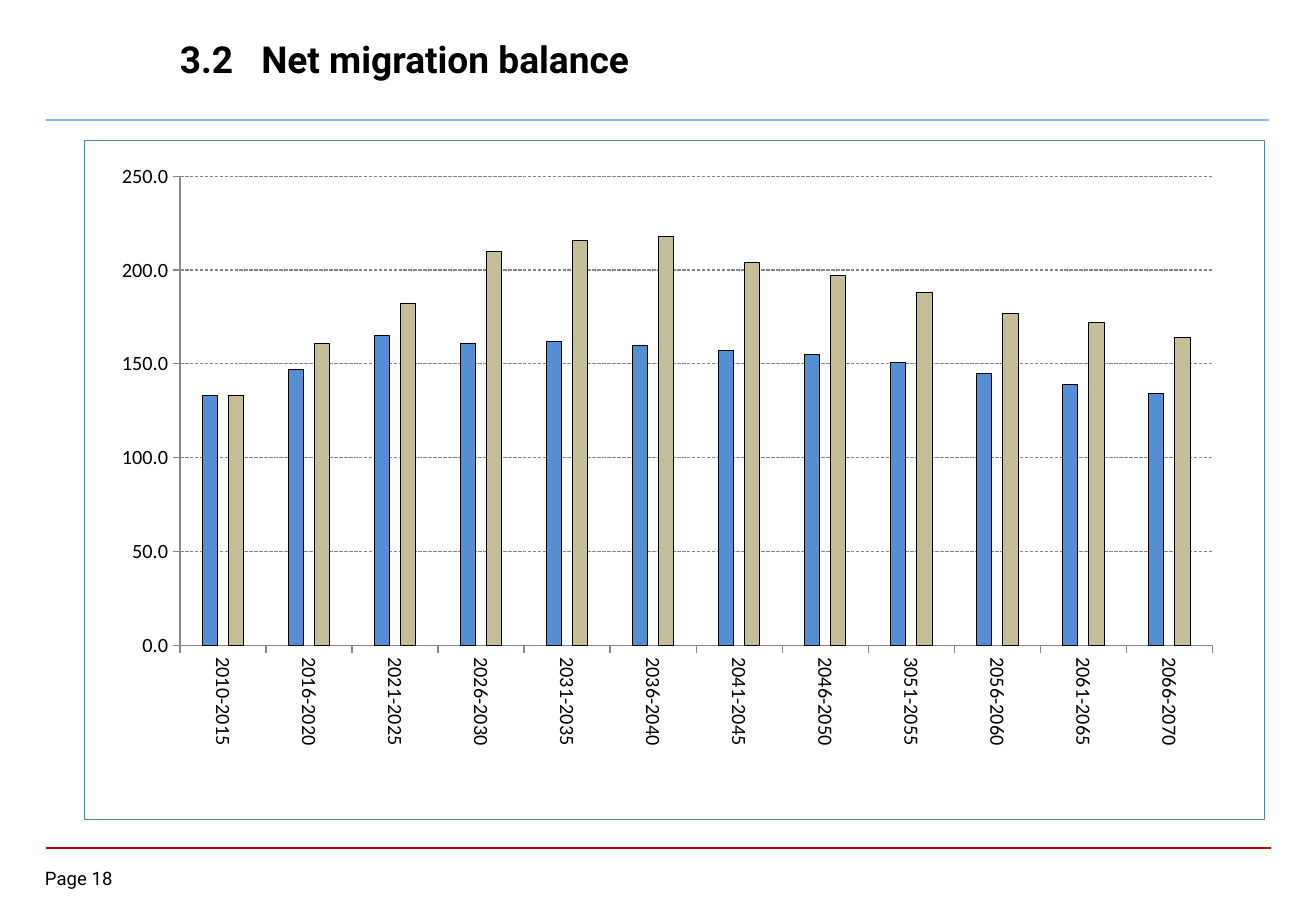
"""Build the net migration balance slide with its clustered column chart."""
from dataclasses import dataclass

from lxml import etree
from pptx import Presentation
from pptx import util as u
from pptx.chart import data as chart_data
from pptx.dml import color
from pptx.enum import chart as charts
from pptx.enum import dml, shapes, text
from pptx.oxml import parse_xml
from pptx.oxml import ns

BLACK = "000000"
AXIS_GRAY = "868686"
PERIODS = ["2010-2015", "2016-2020", "2021-2025", "2026-2030",
           "2031-2035", "2036-2040", "2041-2045", "2046-2050",
           "3051-2055", "2056-2060", "2061-2065", "2066-2070"]


@dataclass
class Rule:
    y: float
    right: float
    hex_color: str
    points: float


@dataclass
class Label:
    words: str
    left: float
    top: float
    width: float
    height: float
    size: int
    bold: bool = False
    tab: float = 0


@dataclass
class Columns:
    hex_color: str
    values: list[int]


RULES = [Rule(6.98, 10.46, "C00000", 1), Rule(0.99, 10.44, "8EB4E3", 1.5)]
LABELS = [
    Label("Page 18", 0.37, 7.12, 0.73, 0.22, 11),
    Label("3.2\tNet migration balance", 1.48, 0.13, 5.75, 0.71, 22, True, 0.67),
]
COLUMNS = [
    Columns("558ED5", [133, 147, 165, 161, 162, 160, 157, 155, 151, 145, 139, 134]),
    Columns("C4BD97", [133, 161, 182, 210, 216, 218, 204, 197, 188, 177, 172, 164]),
]


def rgb(hex_color: str) -> color.RGBColor:
    return color.RGBColor.from_string(hex_color)


def style_line(line, hex_color: str, points: float) -> None:
    line.color.rgb = rgb(hex_color)
    line.width = u.Pt(points)


def style_font(font, name: str, size: int, bold: bool = False) -> None:
    font.name = name
    font.size = u.Pt(size)
    font.bold = bold
    font.color.rgb = rgb(BLACK)


def draw_rule(slide, rule: Rule) -> None:
    connector = slide.shapes.add_connector(
        shapes.MSO_CONNECTOR.STRAIGHT, u.Inches(0.38), u.Inches(rule.y),
        u.Inches(rule.right), u.Inches(rule.y))
    style_line(connector.line, rule.hex_color, rule.points)
    etree.SubElement(connector._element.spPr, ns.qn("a:effectLst"))


def draw_label(slide, label: Label) -> None:
    box = slide.shapes.add_textbox(
        u.Inches(label.left), u.Inches(label.top),
        u.Inches(label.width), u.Inches(label.height))
    frame = box.text_frame
    frame.margin_left = frame.margin_right = 0
    frame.margin_top = frame.margin_bottom = 0
    frame.word_wrap = True
    frame.vertical_anchor = text.MSO_ANCHOR.MIDDLE
    frame.text = label.words
    paragraph = frame.paragraphs[0]
    if label.tab:
        tabs = etree.SubElement(paragraph._p.get_or_add_pPr(), ns.qn("a:tabLst"))
        etree.SubElement(tabs, ns.qn("a:tab"), pos=str(u.Inches(label.tab)), algn="l")
    for run in paragraph.runs:
        style_font(run.font, "Roboto", label.size, label.bold)


def frame_chart(chart) -> None:
    chart_space = chart._chartSpace
    chart_space.chart.addnext(parse_xml(
        f'<c:spPr {ns.nsdecls("c", "a")}><a:noFill/><a:ln w="{u.Pt(0.75)}">'
        '<a:solidFill><a:srgbClr val="4F81BD"/></a:solidFill></a:ln></c:spPr>'))
    chart_space.find(ns.qn("c:date1904")).addnext(
        parse_xml(f'<c:roundedCorners {ns.nsdecls("c")} val="0"/>'))


def place_plot(chart) -> None:
    places = {"x": 0.081, "y": 0.053, "w": 0.875, "h": 0.691}
    modes = '<c:xMode val="edge"/><c:yMode val="edge"/>'
    sizes = "".join(f'<c:{key} val="{value}"/>' for key, value in places.items())
    plot_area = chart._chartSpace.chart.plotArea
    for layout in plot_area.findall(ns.qn("c:layout")):
        plot_area.remove(layout)
    plot_area.insert(0, parse_xml(
        f'<c:layout {ns.nsdecls("c")}><c:manualLayout>'
        f'<c:layoutTarget val="inner"/>{modes}{sizes}</c:manualLayout></c:layout>'))


def style_axes(chart) -> None:
    for axis in (chart.category_axis, chart.value_axis):
        axis.major_tick_mark = charts.XL_TICK_MARK.OUTSIDE
        axis.minor_tick_mark = charts.XL_TICK_MARK.NONE
        style_line(axis.format.line, AXIS_GRAY, 0.75)
        style_font(axis.tick_labels.font, "Calibri", 12)
    body = chart.category_axis._element.txPr.find(ns.qn("a:bodyPr"))
    body.set("rot", "5400000")
    body.set("vert", "horz")
    values = chart.value_axis
    values.minimum_scale, values.maximum_scale, values.major_unit = 0, 250, 50
    values.tick_labels.number_format = "0.0"
    values.tick_labels.number_format_is_linked = False
    values.has_major_gridlines = True
    grid = values.major_gridlines.format.line
    style_line(grid, AXIS_GRAY, 0.75)
    grid.dash_style = dml.MSO_LINE.SQUARE_DOT


def draw_chart(slide) -> None:
    data = chart_data.CategoryChartData()
    data.categories = PERIODS
    for columns in COLUMNS:
        data.add_series("", columns.values)
    chart = slide.shapes.add_chart(
        charts.XL_CHART_TYPE.COLUMN_CLUSTERED, u.Inches(0.69), u.Inches(1.15),
        u.Inches(9.72), u.Inches(5.6), data).chart
    chart.has_title = False
    chart.has_legend = False
    style_font(chart.font, "Calibri", 10)
    plot = chart.plots[0]
    plot.vary_by_categories = False
    plot.gap_width, plot.overlap = 291, -70
    for series, columns in zip(plot.series, COLUMNS):
        series.format.fill.solid()
        series.format.fill.fore_color.rgb = rgb(columns.hex_color)
        style_line(series.format.line, BLACK, 0.5)
    style_axes(chart)
    frame_chart(chart)
    place_plot(chart)


def main() -> None:
    presentation = Presentation()
    presentation.slide_width = u.Inches(10.83)
    presentation.slide_height = u.Inches(7.5)
    slide = presentation.slides.add_slide(presentation.slide_layouts[6])
    for rule in RULES:
        draw_rule(slide, rule)
    for label in LABELS:
        draw_label(slide, label)
    draw_chart(slide)
    presentation.save("out.pptx")


if __name__ == "__main__":
    main()
